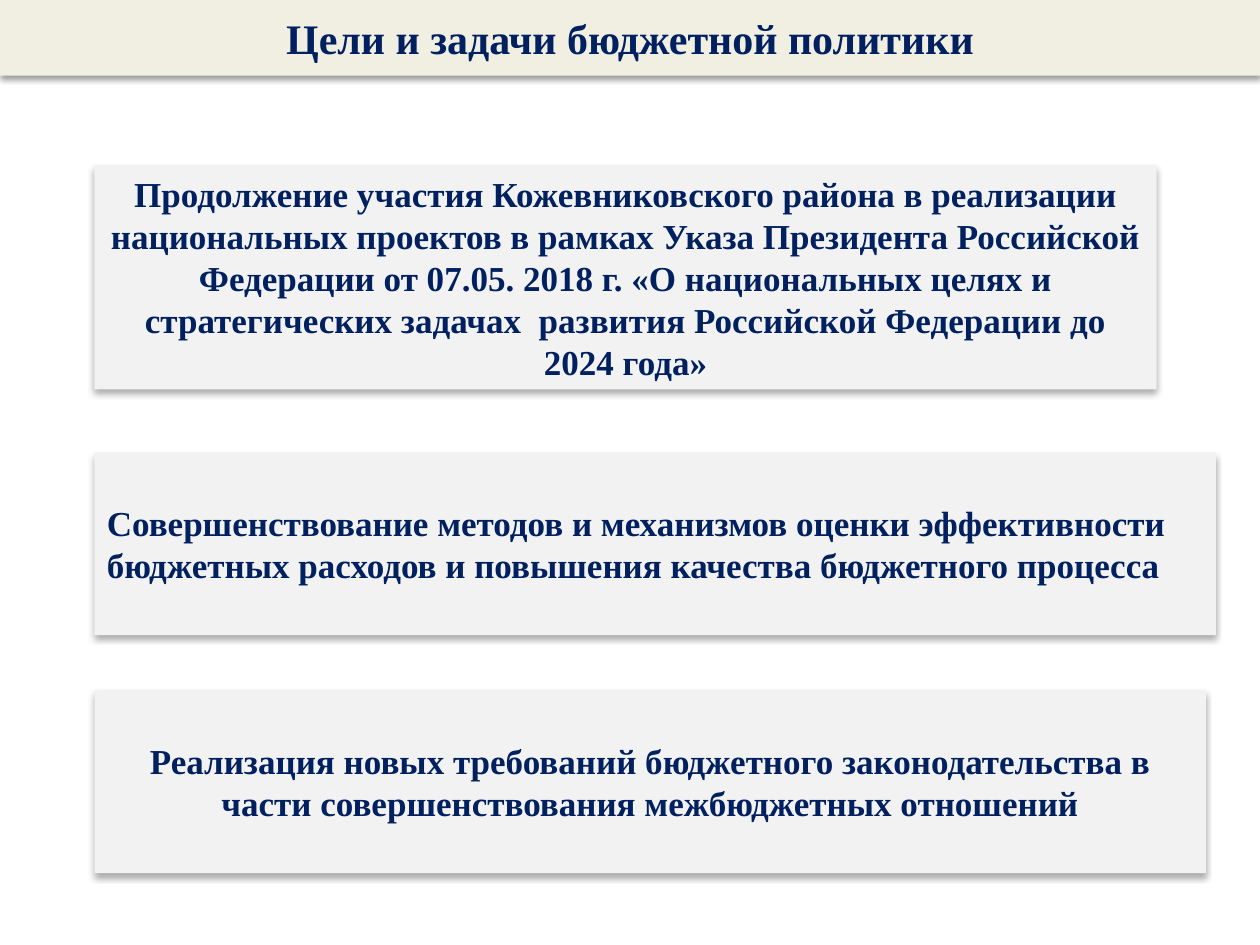
import dataclasses

import pptx
import pptx.dml.color
import pptx.enum.shapes
import pptx.enum.text
import pptx.oxml
import pptx.oxml.ns
import pptx.util

COLUMNS, ROWS = 100, 75
ALIGN = pptx.enum.text.PP_ALIGN


@dataclasses.dataclass(frozen=True)
class Theme:
    font: str = "Times New Roman"
    ink: str = "002060"
    banner: str = "F1EEE2"
    panel: str = "F2F2F2"
    shadow: str = "000000"
    title_size: int = 24
    body_size: int = 20


def write_text(frame, text, *, size, color, font, align=ALIGN.CENTER):
    frame.word_wrap = True
    frame.auto_size = pptx.enum.text.MSO_AUTO_SIZE.NONE
    frame.vertical_anchor = pptx.enum.text.MSO_ANCHOR.MIDDLE
    paragraph = frame.paragraphs[0]
    paragraph.alignment = align
    run = paragraph.add_run()
    run.text = text
    run.font.name = font
    run.font.size = pptx.util.Pt(size)
    run.font.bold = True
    run.font.color.rgb = pptx.dml.color.RGBColor.from_string(color)


class SlideBuilder:
    def __init__(self, presentation, theme):
        self.theme = theme
        self.column = presentation.slide_width / COLUMNS
        self.row = presentation.slide_height / ROWS
        self.slide = presentation.slides.add_slide(presentation.slide_layouts[5])

    def place(self, left, top, width, height):
        return (round(left * self.column), round(top * self.row),
                round(width * self.column), round(height * self.row))

    def fill(self, shape, color):
        shape.fill.solid()
        shape.fill.fore_color.rgb = pptx.dml.color.RGBColor.from_string(color)
        shape.line.fill.background()

    def drop_shadow(self, shape, blur, distance, opacity):
        effects = pptx.oxml.parse_xml(
            f'<a:effectLst {pptx.oxml.ns.nsdecls("a")}>'
            f'<a:outerShdw blurRad="{pptx.util.Pt(blur)}" dist="{pptx.util.Pt(distance)}" '
            f'dir="5400000" rotWithShape="0"><a:srgbClr val="{self.theme.shadow}">'
            f'<a:alpha val="{opacity * 1000}"/></a:srgbClr></a:outerShdw></a:effectLst>')
        shape.element.spPr.append(effects)

    def title(self, text, height):
        shape = self.slide.shapes.title
        shape.left, shape.top, shape.width, shape.height = self.place(0, 0, COLUMNS, height)
        self.fill(shape, self.theme.banner)
        self.drop_shadow(shape, blur=3.1, distance=2, opacity=38)
        write_text(shape.text_frame, text, size=self.theme.title_size,
                   color=self.theme.ink, font=self.theme.font)

    def panel(self, text, left, top, width, height, align=ALIGN.CENTER):
        shape = self.slide.shapes.add_shape(
            pptx.enum.shapes.MSO_SHAPE.RECTANGLE, *self.place(left, top, width, height))
        self.fill(shape, self.theme.panel)
        self.drop_shadow(shape, blur=3.5, distance=2.2, opacity=32)
        write_text(shape.text_frame, text, size=self.theme.body_size,
                   color=self.theme.ink, font=self.theme.font, align=align)


def main():
    presentation = pptx.Presentation()
    presentation.slide_width = pptx.util.Inches(10)
    presentation.slide_height = pptx.util.Inches(7.5)

    builder = SlideBuilder(presentation, Theme())
    builder.title("Цели и задачи бюджетной политики", height=6)

    goals = [
        ("Продолжение участия Кожевниковского района в реализации национальных "
         "проектов в рамках Указа Президента Российской Федерации от 07.05. 2018 г. "
         "«О национальных целях и стратегических задачах  развития Российской "
         "Федерации до 2024 года»", 13.1, 84.3, 17.8, ALIGN.CENTER),
        ("Совершенствование методов и механизмов оценки эффективности бюджетных "
         "расходов и повышения качества бюджетного процесса",
         35.9, 89, 14.5, ALIGN.LEFT),
        ("Реализация новых требований бюджетного законодательства в части "
         "совершенствования межбюджетных отношений", 54.8, 88.2, 14.5, ALIGN.CENTER),
    ]
    for text, top, width, height, align in goals:
        builder.panel(text, 7.5, top, width, height, align)

    presentation.save("out.pptx")


if __name__ == "__main__":
    main()
